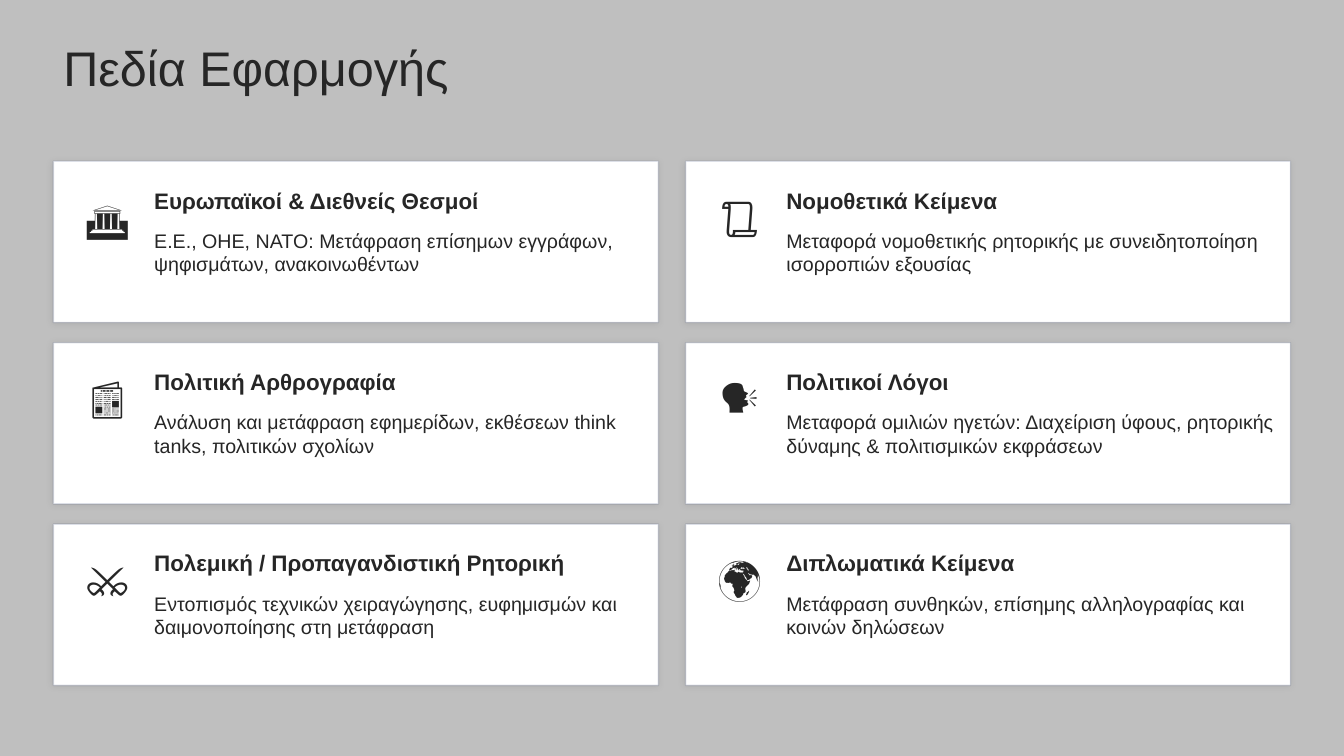
from lxml.etree import SubElement
from pptx import Presentation
from pptx.dml.color import RGBColor
from pptx.enum.shapes import MSO_SHAPE
from pptx.enum.text import MSO_ANCHOR, PP_ALIGN
from pptx.oxml.ns import qn
from pptx.util import Inches, Pt

TITLE = "Πεδία Εφαρμογής"
CARDS = [
    ("🏛️", "Ευρωπαϊκοί & Διεθνείς Θεσμοί",
     "Ε.Ε., ΟΗΕ, ΝΑΤΟ: Μετάφραση επίσημων εγγράφων, ψηφισμάτων, ανακοινωθέντων"),
    ("📜", "Νομοθετικά Κείμενα",
     "Μεταφορά νομοθετικής ρητορικής με συνειδητοποίηση ισορροπιών εξουσίας"),
    ("📰", "Πολιτική Αρθρογραφία",
     "Ανάλυση και μετάφραση εφημερίδων, εκθέσεων think tanks, πολιτικών σχολίων"),
    ("🗣️", "Πολιτικοί Λόγοι",
     "Μεταφορά ομιλιών ηγετών: Διαχείριση ύφους, ρητορικής δύναμης & πολιτισμικών εκφράσεων"),
    ("⚔️", "Πολεμική / Προπαγανδιστική Ρητορική",
     "Εντοπισμός τεχνικών χειραγώγησης, ευφημισμών και δαιμονοποίησης στη μετάφραση"),
    ("🌍", "Διπλωματικά Κείμενα",
     "Μετάφραση συνθηκών, επίσημης αλληλογραφίας και κοινών δηλώσεων"),
]

FONT, INK, WHITE, GREY, NAVY = "Arial", "262626", "FFFFFF", "BFBFBF", "1A2B5E"
LEFT, TOP = 0.53, 1.6
CARD_W, CARD_H = 6, 1.6
GAP_X, GAP_Y = 0.27, 0.2
COLUMNS = 2


def color(hex_code):
    return RGBColor.from_string(hex_code)


def add_text(slide, text, x, y, w, h, size, bold=False, align=PP_ALIGN.LEFT,
             anchor=MSO_ANCHOR.MIDDLE, inset=True):
    tf = slide.shapes.add_textbox(Inches(x), Inches(y), Inches(w), Inches(h)).text_frame
    tf.word_wrap = True
    tf.vertical_anchor = anchor
    if not inset:
        tf.margin_left = tf.margin_top = tf.margin_right = tf.margin_bottom = 0
    p = tf.paragraphs[0]
    p.alignment = align
    r = p.add_run()
    r.text = text
    r.font.name = FONT
    r.font.size = Pt(size)
    r.font.bold = bold
    r.font.color.rgb = color(INK)


def add_panel(slide, x, y):
    """White card with a faint outline and a soft shadow."""
    sp = slide.shapes.add_shape(MSO_SHAPE.RECTANGLE, Inches(x), Inches(y),
                                Inches(CARD_W), Inches(CARD_H))
    sp.fill.solid()
    sp.fill.fore_color.rgb = color(WHITE)
    sp.line.width = Pt(1)
    sp.line.color.rgb = color(NAVY)
    outline = sp.line._ln.find(".//" + qn("a:srgbClr"))
    SubElement(outline, qn("a:alpha"), val="15000")
    sp.shadow.inherit = False
    effects = sp._element.spPr.find(qn("a:effectLst"))
    shadow = SubElement(effects, qn("a:outerShdw"), blurRad=str(Pt(5)), dist=str(Pt(1)),
                        dir=str(135 * 60000), algn="bl", rotWithShape="0")
    tint = SubElement(shadow, qn("a:srgbClr"), val="000000")
    SubElement(tint, qn("a:alpha"), val="7000")


def add_card(slide, x, y, icon, heading, body):
    add_panel(slide, x, y)
    add_text(slide, icon, x + 0.135, y + 0.13, 0.8, 0.8, 29.3, align=PP_ALIGN.CENTER)
    add_text(slide, heading, x + 1, y + 0.13, 4.87, 0.51, 16, bold=True, inset=False)
    add_text(slide, body, x + 1, y + 0.67, 4.87, 0.8, 14,
             anchor=MSO_ANCHOR.TOP, inset=False)


def main():
    prs = Presentation()
    prs.slide_width, prs.slide_height = Inches(13.33), Inches(7.5)
    slide = prs.slides.add_slide(prs.slide_layouts[6])
    slide.background.fill.solid()
    slide.background.fill.fore_color.rgb = color(GREY)

    add_text(slide, TITLE, LEFT, 0, 12.27, 1.33, 34.7)
    for i, card in enumerate(CARDS):
        row, col = divmod(i, COLUMNS)
        add_card(slide, LEFT + col * (CARD_W + GAP_X), TOP + row * (CARD_H + GAP_Y), *card)

    prs.save("out.pptx")


if __name__ == "__main__":
    main()
